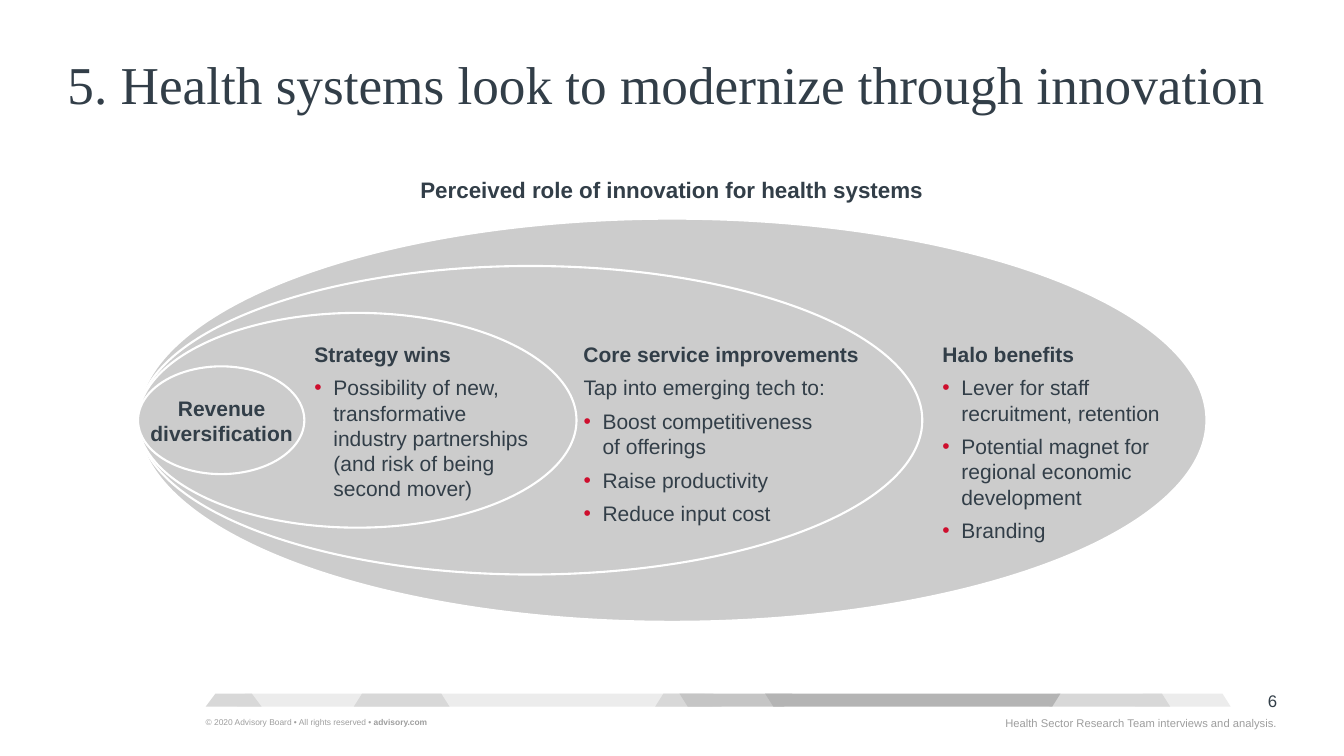
from dataclasses import dataclass

from lxml.etree import SubElement
from pptx import Presentation
from pptx.dml.color import RGBColor
from pptx.enum.shapes import MSO_SHAPE
from pptx.enum.text import MSO_ANCHOR, MSO_AUTO_SIZE, PP_ALIGN
from pptx.oxml.ns import qn
from pptx.util import Pt


@dataclass(frozen=True)
class Theme:
    ink: str = "323E48"
    mute: str = "9E9E9E"
    red: str = "CE0E2D"
    white: str = "FFFFFF"
    oval: str = "CCCCCC"
    pale: str = "ECECEC"
    light: str = "D8D8D8"
    mid: str = "C5C5C5"
    dark: str = "B4B4B4"
    sans: str = "Arial"
    serif: str = "Times New Roman"
    title: float = 38
    lead: float = 16
    body: float = 15
    page: float = 12
    note: float = 8
    legal: float = 6


T = Theme()
LEFT, MID, RIGHT = PP_ALIGN.LEFT, PP_ALIGN.CENTER, PP_ALIGN.RIGHT
INDENT = 13.6


def apply(obj, **form):
    for name, value in form.items():
        setattr(obj, name, value)


def style(font, size, color=T.ink, bold=False, face=T.sans):
    apply(font, size=Pt(size), bold=bold, name=face)
    font.color.rgb = RGBColor.from_string(color)


def prepare(frame, wrap=True, anchor=MSO_ANCHOR.TOP):
    apply(frame, margin_left=0, margin_right=0, margin_top=0, margin_bottom=0,
          word_wrap=wrap, auto_size=MSO_AUTO_SIZE.NONE, vertical_anchor=anchor)


def bullet(para):
    props = para._p.get_or_add_pPr()
    props.set("marL", str(Pt(INDENT)))
    props.set("indent", str(Pt(-INDENT)))
    color = SubElement(props, qn("a:buClr"))
    SubElement(color, qn("a:srgbClr"), val=T.red)
    SubElement(props, qn("a:buFont"), typeface=T.sans)
    SubElement(props, qn("a:buChar"), char="•")


def write(slide, box, lines, size, align=LEFT, wrap=True, **look):
    """Lines that start with a bullet sign become bulleted paragraphs."""
    frame = slide.shapes.add_textbox(*map(Pt, box)).text_frame
    prepare(frame, wrap)
    for i, line in enumerate(lines):
        para = frame.paragraphs[0] if i == 0 else frame.add_paragraph()
        para.alignment = align
        if i:
            para.space_before = Pt(6)
        if line.startswith("• "):
            bullet(para)
        run = para.add_run()
        run.text = line.removeprefix("• ")
        style(run.font, size, **look)
    return frame


def draw(slide, kind, box, fill, line=None):
    shape = slide.shapes.add_shape(kind, *map(Pt, box))
    shape.shadow.inherit = False
    shape.fill.solid()
    shape.fill.fore_color.rgb = RGBColor.from_string(fill)
    if line:
        shape.line.color.rgb = RGBColor.from_string(line)
        shape.line.width = Pt(1.5)
    else:
        shape.line.fill.background()
    return shape


def header(slide, box, text):
    title = slide.shapes.title
    apply(title, **dict(zip(("left", "top", "width", "height"), map(Pt, box))))
    prepare(title.text_frame, anchor=MSO_ANCHOR.BOTTOM)
    para = title.text_frame.paragraphs[0]
    apply(para, alignment=LEFT, line_spacing=0.9)
    run = para.add_run()
    run.text = text
    style(run.font, T.title, face=T.serif)


def footer(slide, box):
    x, y, width, height = box
    # Band: offset, width, colour, slope, turn
    band = [
        (22.3, 339.8, T.pale, 0.63, 0),
        (321.1, 47.5, T.light, 0.63, 0),
        (338.4, 80.6, T.mid, 0.63, 180),
        (105.8, 68.4, T.light, 0.63, 0),
        (663.8, 68.4, T.pale, 0.63, 0),
        (602.6, 86.4, T.light, 0.63, 0),
        (399.6, 211, T.dark, 0.63, 180),
        (0, 40, T.light, 0.75, 0),
    ]
    for dx, wide, color, slope, turn in band:
        piece = draw(slide, MSO_SHAPE.TRAPEZOID, (x + dx, y, wide, 9.4), color)
        piece.adjustments[0] = slope
        piece.rotation = turn

    # Small print and page number
    legal = write(slide, (x, y + 16.5, 224.6, 7.2),
                  ["© 2020 Advisory Board • All rights reserved • "],
                  T.legal, color=T.mute)
    site = legal.paragraphs[0].add_run()
    site.text = "advisory.com"
    style(site.font, T.legal, T.mute, bold=True)
    end = x + width
    write(slide, (end - 36, y - 2.2, 36, 14.4), ["6"], T.page, RIGHT)
    write(slide, (end - 306, y + 16.5, 306, 9.4),
          ["Health Sector Research Team interviews and analysis."],
          T.note, RIGHT, wrap=False, color=T.mute)


def diagram(slide, box):
    x, y, width, height = box
    axis = y + height / 2

    # Nested ovals share their left edge and axis
    for wide, tall in [(width, height), (560.2, 220.4), (313.2, 153.4), (118.8, 77)]:
        draw(slide, MSO_SHAPE.OVAL, (x, axis - tall / 2, wide, tall), T.oval, T.white)

    # Core label
    write(slide, (x + 1.4, axis - 18, 116.6, 36), ["Revenue diversification"],
          T.body, MID, bold=True)

    # Columns: offset, width, heading, points
    parts = [
        (126, 160.6, "Strategy wins",
         ["• Possibility of new, transformative industry partnerships "
          "(and risk of being second mover)"]),
        (318.2, 178.6, "Core service improvements",
         ["Tap into emerging tech to:",
          "• Boost competitiveness of offerings",
          "• Raise productivity",
          "• Reduce input cost"]),
        (574.6, 158.4, "Halo benefits",
         ["• Lever for staff recruitment, retention",
          "• Potential magnet for regional economic development",
          "• Branding"]),
    ]
    for dx, wide, head, points in parts:
        write(slide, (x + dx, y + 87.8, 201.6, 18), [head], T.body, bold=True)
        write(slide, (x + dx, y + 111.6, wide, 121), points, T.body)


def main():
    deck = Presentation()
    apply(deck, slide_width=Pt(960), slide_height=Pt(540))
    slide = deck.slides.add_slide(deck.slide_layouts[5])
    footer(slide, (146.9, 495.4, 765.4, 25.9))
    header(slide, (48.2, 40.3, 890.6, 42.5),
           "5. Health systems look to modernize through innovation")
    write(slide, (191.5, 126, 576.7, 19.4),
          ["Perceived role of innovation for health systems"],
          T.lead, MID, bold=True)
    diagram(slide, (98.6, 156.2, 763.2, 288))
    deck.save("out.pptx")


if __name__ == "__main__":
    main()
